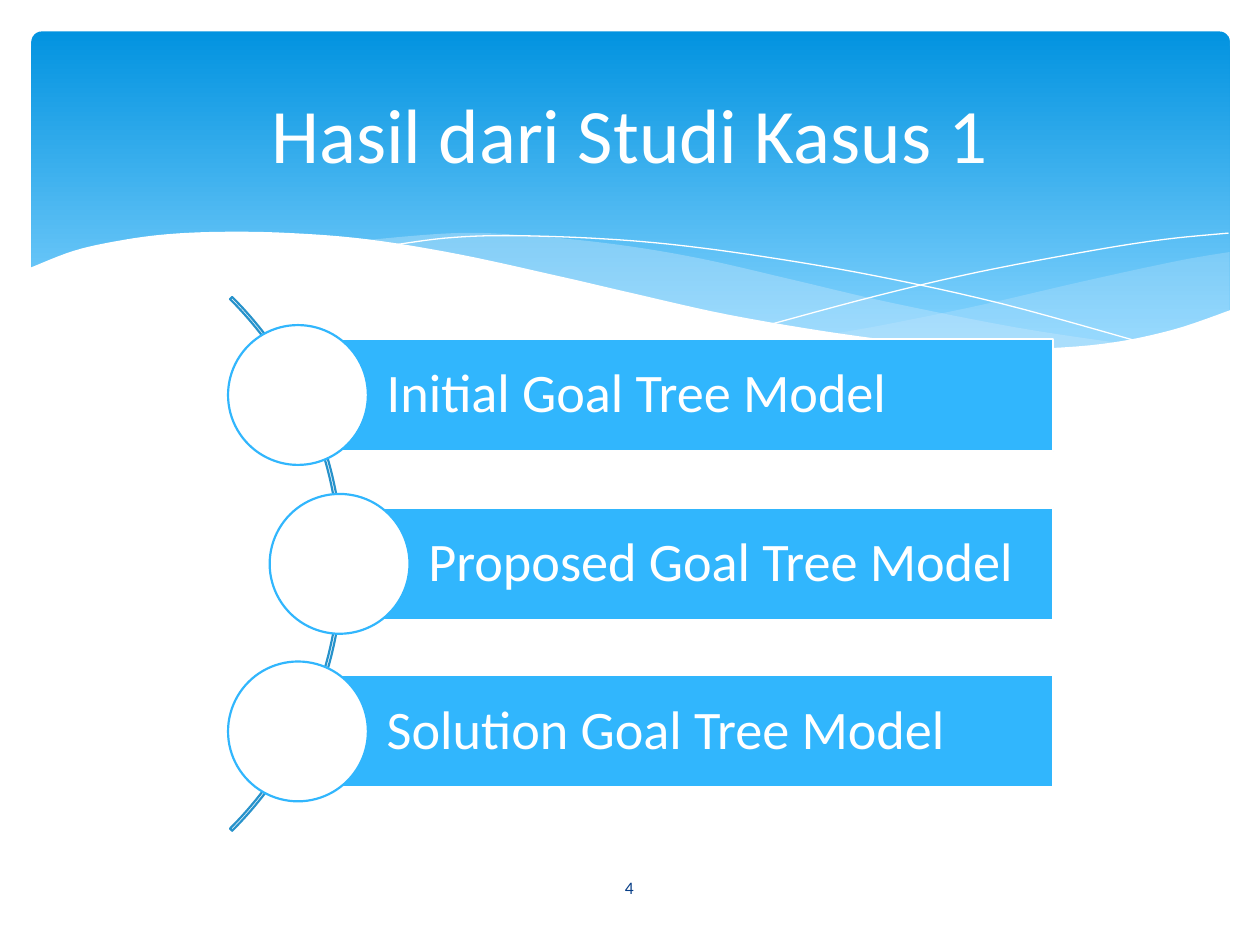
from dataclasses import dataclass

from lxml.etree import SubElement
from pptx import Presentation
from pptx.dml.color import RGBColor as RGB
from pptx.enum.shapes import MSO_SHAPE as SHAPE
from pptx.enum.text import MSO_ANCHOR as ANCHOR, PP_ALIGN as ALIGN
from pptx.oxml.ns import qn
from pptx.util import Pt

PX = 9144  # EMU per px, 100 px to the inch


@dataclass(frozen=True)
class Theme:
    font: str = "Calibri"
    white: str = "FFFFFF"
    sky_top: str = "0293E0"
    sky_bottom: str = "83D3FE"
    mist: str = "C6E7FC"
    bar: str = "31B6FD"
    arc: str = "2792CB"
    number: str = "073E87"
    title_size: int = 44
    bar_size: int = 31
    number_size: int = 10
    line_width: float = 1.25


def rgb(color):
    return RGB.from_string(color)


def smooth(knots, steps=6):
    """Points of a Catmull-Rom curve through the knots."""
    padded = [knots[0], *knots, knots[-1]]
    points = [knots[0]]
    for a, b, c, d in zip(padded, padded[1:], padded[2:], padded[3:]):
        for i in range(1, steps + 1):
            t = i / steps
            points.append(tuple(
                (2 * q + (r - p) * t + (2 * p - 5 * q + 4 * r - u) * t**2
                 + (3 * q - p - 3 * r + u) * t**3) / 2
                for p, q, r, u in zip(a, b, c, d)))
    return points


class Deck:
    def __init__(self, theme, width, height):
        self.theme = theme
        self.prs = Presentation()
        self.prs.slide_width, self.prs.slide_height = width * PX, height * PX
        self.s = self.prs.slides.add_slide(self.prs.slide_layouts[5])

    def style(self, sp, fill=None, line=None, width=None):
        sp.shadow.inherit = False
        if fill:
            sp.fill.solid()
            sp.fill.fore_color.rgb = rgb(fill)
        else:
            sp.fill.background()
        if line:
            sp.line.color.rgb = rgb(line)
            sp.line.width = Pt(self.theme.line_width if width is None else width)
        else:
            sp.line.fill.background()

    def shape(self, kind, box, fill=None, line=None, adjust=()):
        sp = self.s.shapes.add_shape(kind, *(v * PX for v in box))
        for i, value in enumerate(adjust):
            sp.adjustments[i] = value
        self.style(sp, fill, line)
        return sp

    def sky(self, box):
        sp = self.shape(SHAPE.ROUNDED_RECTANGLE, box, adjust=[0.03])
        sp.fill.gradient()
        sp.fill.gradient_angle = 270
        stops = zip(sp.fill.gradient_stops, (0, 0.9),
                    (self.theme.sky_top, self.theme.sky_bottom))
        for stop, position, color in stops:
            stop.position = position
            stop.color.rgb = rgb(color)

    def outline(self, points, closed):
        first, *rest = [(x * PX, y * PX) for x, y in points]
        builder = self.s.shapes.build_freeform(*first)
        builder.add_line_segments(rest, close=closed)
        return builder.convert_to_shape()

    def wave(self, points, color, opacity=100):
        sp = self.outline(points, True)
        self.style(sp, color)
        if opacity < 100:
            clr = sp.element.spPr.find(qn("a:solidFill"))[0]
            SubElement(clr, qn("a:alpha")).set("val", str(opacity * 1000))

    def hairline(self, knots):
        self.style(self.outline(smooth(knots), False), line=self.theme.white, width=0)

    def label(self, sp, text, size, color, align):
        tf = sp.text_frame
        tf.text = text
        tf.word_wrap = True
        tf.vertical_anchor = ANCHOR.MIDDLE
        p = tf.paragraphs[0]
        p.alignment = align
        font = p.runs[0].font
        font.name, font.size, font.color.rgb = self.theme.font, Pt(size), rgb(color)

    def title(self, text, box):
        sp = self.s.shapes.title
        sp.left, sp.top, sp.width, sp.height = (v * PX for v in box)
        sp.element.getparent().append(sp.element)  # in front of the waves
        self.label(sp, text, self.theme.title_size, self.theme.white, ALIGN.CENTER)

    def number(self, text, box):
        sp = self.s.shapes.add_textbox(*(v * PX for v in box))
        self.label(sp, text, self.theme.number_size, self.theme.number, ALIGN.CENTER)

    def bar(self, text, box):
        sp = self.shape(SHAPE.RECTANGLE, box, self.theme.bar, self.theme.white)
        self.label(sp, text, self.theme.bar_size, self.theme.white, ALIGN.LEFT)
        tf = sp.text_frame
        tf.margin_left = 71 * PX
        tf.margin_right = tf.margin_top = tf.margin_bottom = 9 * PX
        tf.paragraphs[0].line_spacing = 0.9

    def circle(self, x, y, size):
        self.shape(SHAPE.OVAL, (x, y, size, size), self.theme.white, self.theme.bar)


RIGHT_TOP = [(976, 200), (935, 207), (861, 223), (779, 242), (706, 257), (661, 265)]
RIGHT_BOTTOM = [(661, 265), (719, 271), (781, 277), (835, 277), (889, 272),
                (935, 262), (976, 247)]
MIDDLE_TOP = [(893, 273), (807, 260), (706, 240), (629, 222), (555, 205),
              (489, 194), (420, 187), (361, 185), (286, 191)]
MIDDLE_BOTTOM = [(286, 191), (362, 203), (449, 222), (530, 240), (618, 258),
                 (695, 270), (773, 277), (838, 278), (893, 273)]
FALLING_LINE = [(309, 195), (353, 189), (401, 187), (469, 189), (533, 194),
                (608, 204), (695, 219), (795, 241), (907, 272)]
RISING_LINE = [(613, 257), (695, 235), (776, 216), (866, 199), (924, 190), (975, 185)]
FRONT_EDGE = [(977, 246), (930, 262), (875, 273), (809, 277), (744, 274),
              (668, 265), (579, 250), (503, 233), (447, 220), (365, 202),
              (292, 190), (230, 185), (177, 184), (132, 186), (95, 191),
              (59, 199), (23, 213)]
FRONT_CORNERS = [(23, 329), (977, 329)]

GOALS = [("Initial Goal Tree Model", 181), ("Proposed Goal Tree Model", 214),
         ("Solution Goal Tree Model", 181)]
BAR_TOP, BAR_RIGHT, BAR_HEIGHT, BAR_STEP = 269, 836, 89, 133.5
CIRCLE = 111


def main():
    theme = Theme()
    deck = Deck(theme, 1000, 750)

    deck.sky((25, 25, 951, 270))
    deck.wave(smooth(RIGHT_TOP) + smooth(RIGHT_BOTTOM), theme.mist, 29)
    deck.wave(smooth(MIDDLE_TOP) + smooth(MIDDLE_BOTTOM), theme.mist, 40)
    deck.hairline(FALLING_LINE)
    deck.hairline(RISING_LINE)
    deck.wave(smooth(FRONT_EDGE) + FRONT_CORNERS, theme.white)

    deck.title("Hasil dari Studi Kasus 1", (50, 37, 900, 137))
    deck.number("4", (436, 684, 127, 40))

    deck.shape(SHAPE.BLOCK_ARC, (-327, 148, 599, 599), line=theme.arc,
               adjust=[189, 27, 0.004])
    for i, (text, x) in enumerate(GOALS):
        y = BAR_TOP + round(i * BAR_STEP)
        left = x + CIRCLE // 2
        deck.bar(text, (left, y, BAR_RIGHT - left, BAR_HEIGHT))
        deck.circle(x, y - (CIRCLE - BAR_HEIGHT) // 2, CIRCLE)

    deck.prs.save("out.pptx")


if __name__ == "__main__":
    main()
